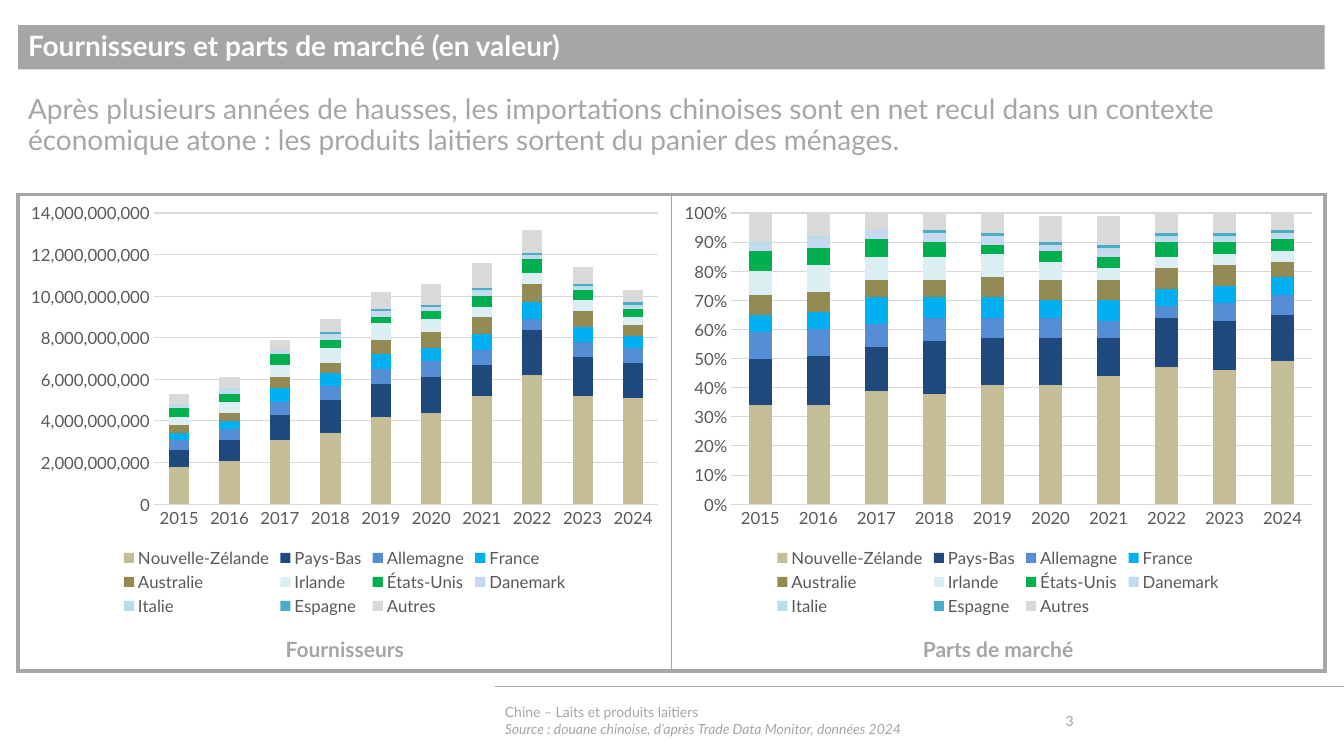
import pptx
import pptx.chart.data
import pptx.dml.color
import pptx.enum.chart
import pptx.enum.shapes
import pptx.enum.text
import pptx.oxml
import pptx.oxml.ns
import pptx.util

RGB = pptx.dml.color.RGBColor.from_string
ALIGN = pptx.enum.text.PP_ALIGN
ANCHOR = pptx.enum.text.MSO_ANCHOR
XL = pptx.enum.chart

TITLE = "Fournisseurs et parts de marché (en valeur)"
MESSAGE = ("Après plusieurs années de hausses, les importations chinoises sont en net recul "
           "dans un contexte économique atone : les produits laitiers sortent du panier des ménages.")
FOOTER = "Chine – Laits et produits laitiers"
SOURCE = "Source : douane chinoise, d’après Trade Data Monitor, données 2024"
PAGE = "3"
YEARS = [str(year) for year in range(2015, 2025)]

# Total imports of each year, in hundreds of millions
TOTALS = [53, 61, 80, 89, 103, 108, 119, 132, 113, 104]
# Country: (colour, market share of each year in %)
SUPPLIERS = {
    "Nouvelle-Zélande": (RGB("C4BD97"), [34, 34, 39, 38, 41, 41, 44, 47, 46, 49]),
    "Pays-Bas": (RGB("1F497D"), [16, 17, 15, 18, 16, 16, 13, 17, 17, 16]),
    "Allemagne": (RGB("558ED5"), [9, 9, 8, 8, 7, 7, 6, 4, 6, 7]),
    "France": (RGB("00B0F0"), [6, 6, 9, 7, 7, 6, 7, 6, 6, 6]),
    "Australie": (RGB("948A54"), [7, 7, 6, 6, 7, 7, 7, 7, 7, 5]),
    "Irlande": (RGB("DBEEF4"), [8, 9, 8, 8, 8, 6, 4, 4, 4, 4]),
    "États-Unis": (RGB("00B050"), [7, 6, 6, 5, 3, 4, 4, 5, 4, 4]),
    "Danemark": (RGB("C6D9F1"), [2, 3, 3, 3, 3, 2, 2, 1, 1, 1]),
    "Italie": (RGB("B7DEE8"), [1] * 2 + [0] * 4 + [1] * 4),
    "Espagne": (RGB("4BACC6"), [0] * 3 + [1] * 7),
    "Autres": (RGB("D9D9D9"), [10, 8, 6, 7, 8, 9, 10, 8, 7, 6]),
}
HUNDRED_MILLION = 100_000_000
SHARES = {name: [v / 100 for v in shares] for name, (_, shares) in SUPPLIERS.items()}
IMPORTS = {name: [round(total * v) * HUNDRED_MILLION for total, v in zip(TOTALS, shares)]
           for name, shares in SHARES.items()}
# Caption, values, axis maximum, axis step, number format
PANELS = [
    ("Fournisseurs", IMPORTS, 140 * HUNDRED_MILLION, 20 * HUNDRED_MILLION, "#,##0"),
    ("Parts de marché", SHARES, 1, 0.1, "0%"),
]

FONT = "Lato"
GREY = RGB("A6A6A6")
LABEL = RGB("595959")
GRID = RGB("D9D9D9")
WHITE = RGB("FFFFFF")

PX = 9144  # 100 px to the inch
SLIDE_W, SLIDE_H = 1333, 750
LEFT, PANEL_TOP, PANEL_W, PANEL_H = 18, 193, 648, 473
CHART_H, CAPTION_TOP, CAPTION_H = 422, 627, 35
FOOTER_LEFT, FOOTER_TOP, FOOTER_H, RULE_Y = 491, 695, 40, 681


def px(*lengths):
    return [pptx.util.Emu(n * PX) for n in lengths]


def write(sp, *lines, size, color=GREY, bold=False, align=ALIGN.LEFT,
          anchor=ANCHOR.TOP, spacing=None, italic_line=None):
    tf = sp.text_frame
    tf.word_wrap = True
    tf.vertical_anchor = anchor
    for i, text in enumerate(lines):
        p = tf.add_paragraph() if i else tf.paragraphs[0]
        p.alignment = align
        if spacing:
            p.line_spacing = spacing
        r = p.add_run()
        r.text = text
        r.font.name, r.font.size = FONT, pptx.util.Pt(size)
        r.font.bold, r.font.italic = bold, i == italic_line
        r.font.color.rgb = color


def set_font(font):
    font.name, font.size = FONT, pptx.util.Pt(12)
    font.color.rgb = LABEL


def set_line(line, color, width):
    line.color.rgb = color
    line.width = pptx.util.Pt(width)


def set_borders(cell, **widths):
    """Draw grey borders; widths in points are given as L, R, T and B, in that order."""
    tcPr = cell._tc.get_or_add_tcPr()
    for side, width in widths.items():
        tcPr.append(pptx.oxml.parse_xml(
            f'<a:ln{side} {pptx.oxml.ns.nsdecls("a")} w="{pptx.util.Pt(width)}">'
            f'<a:solidFill><a:srgbClr val="{GREY}"/></a:solidFill></a:ln{side}>'))


def add_stacked_chart(s, left, values, top_value, step, number_format):
    data = pptx.chart.data.CategoryChartData(number_format=number_format)
    data.categories = YEARS
    for name, numbers in values.items():
        data.add_series(name, numbers)
    chart = s.shapes.add_chart(XL.XL_CHART_TYPE.COLUMN_STACKED,
                               *px(left, PANEL_TOP, PANEL_W, CHART_H), data).chart
    chart.has_title = False
    set_font(chart.font)
    chart.has_legend = True
    chart.legend.position = XL.XL_LEGEND_POSITION.BOTTOM
    chart.legend.include_in_layout = False
    set_font(chart.legend.font)

    plot = chart.plots[0]
    plot.gap_width, plot.overlap, plot.vary_by_categories = 150, 100, False
    for series in plot.series:
        series.format.fill.solid()
        series.format.fill.fore_color.rgb = SUPPLIERS[series.name][0]

    for axis in (chart.category_axis, chart.value_axis):
        axis.major_tick_mark = axis.minor_tick_mark = XL.XL_TICK_MARK.NONE
        set_font(axis.tick_labels.font)
    set_line(chart.category_axis.format.line, GRID, 0.75)
    axis = chart.value_axis
    axis.format.line.fill.background()
    set_line(axis.major_gridlines.format.line, GRID, 0.75)
    axis.minimum_scale, axis.maximum_scale, axis.major_unit = 0, top_value, step
    axis.tick_labels.number_format = number_format
    axis.tick_labels.number_format_is_linked = False


def main():
    prs = pptx.Presentation()
    prs.slide_width, prs.slide_height = px(SLIDE_W, SLIDE_H)
    s = prs.slides.add_slide(prs.slide_layouts[6])

    rule = s.shapes.add_connector(pptx.enum.shapes.MSO_CONNECTOR.STRAIGHT,
                                  *px(SLIDE_W, RULE_Y, FOOTER_LEFT, RULE_Y))
    set_line(rule.line, GREY, 0.5)
    rule._element.spPr.append(
        pptx.oxml.parse_xml(f'<a:effectLst {pptx.oxml.ns.nsdecls("a")}/>'))

    frame = s.shapes.add_table(1, 2, *px(LEFT, PANEL_TOP, 2 * PANEL_W, PANEL_H)).table
    frame.first_row = frame.horz_banding = False
    set_borders(frame.cell(0, 0), L=3, R=1, T=3, B=3)
    set_borders(frame.cell(0, 1), L=1, R=3, T=3, B=3)
    for cell in frame.iter_cells():
        cell.fill.background()

    bar = s.shapes.add_shape(pptx.enum.shapes.MSO_SHAPE.RECTANGLE,
                             *px(LEFT, 25, 2 * PANEL_W, 44))
    bar.shadow.inherit = False
    bar.fill.solid()
    bar.fill.fore_color.rgb = GREY
    bar.line.fill.background()
    write(bar, TITLE, size=20, color=WHITE, bold=True, anchor=ANCHOR.MIDDLE, spacing=0.9)

    message = s.shapes.add_textbox(*px(LEFT, 90, 2 * PANEL_W, 81))
    write(message, MESSAGE, size=20, spacing=0.9)

    for i, (caption, *chart_settings) in enumerate(PANELS):
        left = LEFT + i * PANEL_W
        add_stacked_chart(s, left, *chart_settings)
        label = s.shapes.add_textbox(*px(left, CAPTION_TOP, PANEL_W, CAPTION_H))
        write(label, caption, size=15, bold=True, align=ALIGN.CENTER)

    footer = s.shapes.add_textbox(*px(FOOTER_LEFT, FOOTER_TOP, 543, FOOTER_H))
    write(footer, FOOTER, SOURCE, size=10, anchor=ANCHOR.MIDDLE, italic_line=1)
    page = s.shapes.add_textbox(*px(1047, FOOTER_TOP, 99, FOOTER_H))
    write(page, PAGE, size=10, anchor=ANCHOR.MIDDLE)

    prs.save("out.pptx")


if __name__ == "__main__":
    main()
